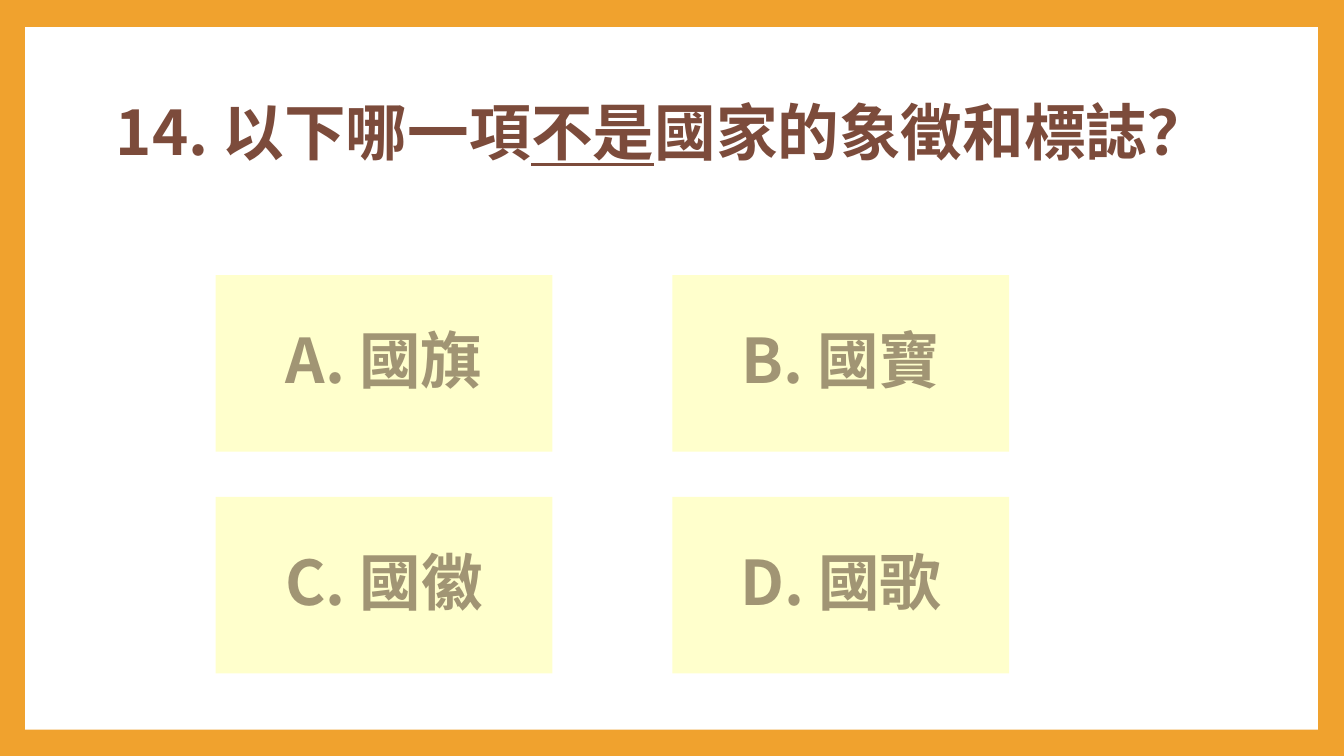
"""Build a quiz slide with one question and a grid of four answers."""
from dataclasses import dataclass

from lxml.etree import SubElement
from pptx import Presentation
from pptx.dml.color import RGBColor
from pptx.enum.shapes import MSO_SHAPE
from pptx.enum.text import MSO_ANCHOR, PP_ALIGN
from pptx.oxml.ns import qn
from pptx.shapes.autoshape import Shape
from pptx.slide import Slide
from pptx.text.text import Font, _Paragraph
from pptx.util import Inches, Pt

ORANGE = RGBColor(0xF0, 0xA2, 0x2E)
WHITE = RGBColor(0xFF, 0xFF, 0xFF)
BROWN = RGBColor(0x7C, 0x4B, 0x3B)
CREAM = RGBColor(0xFF, 0xFF, 0xCC)
KHAKI = RGBColor(0xA1, 0x95, 0x74)
FONT_NAME = "Noto Sans CJK SC"
GRID_LEFT, GRID_TOP = 2.14, 2.73
COLUMN_STEP, ROW_STEP = 4.53, 2.2
ANSWER_WIDTH, ANSWER_HEIGHT = 3.34, 1.75


@dataclass(frozen=True)
class Answer:
    text: str
    column: int
    row: int


ANSWERS = [
    Answer("A. 國旗", 0, 0),
    Answer("B. 國寶", 1, 0),
    Answer("C. 國徽", 0, 1),
    Answer("D. 國歌", 1, 1),
]


def format_font(font: Font, color: RGBColor) -> None:
    font.name = FONT_NAME
    font.size = Pt(44)
    font.bold = True
    font.color.rgb = color
    SubElement(font._element, qn("a:ea"), typeface=FONT_NAME)


def format_paragraph(paragraph: _Paragraph, color: RGBColor, alignment: PP_ALIGN) -> None:
    paragraph.alignment = alignment
    paragraph.line_spacing = 0.9
    format_font(paragraph.font, color)
    for run in paragraph.runs:
        format_font(run.font, color)


def add_rectangle(slide: Slide, left: float, top: float, width: float,
                  height: float, color: RGBColor) -> Shape:
    rectangle = slide.shapes.add_shape(
        MSO_SHAPE.RECTANGLE, Inches(left), Inches(top), Inches(width), Inches(height))
    rectangle.shadow.inherit = False
    rectangle.fill.solid()
    rectangle.fill.fore_color.rgb = color
    rectangle.line.fill.background()
    return rectangle


def write_question(slide: Slide) -> None:
    title = slide.shapes.title
    title.left, title.top = Inches(1.05), Inches(0.52)
    title.width, title.height = Inches(11.24), Inches(1.65)
    title.text_frame.vertical_anchor = MSO_ANCHOR.MIDDLE
    paragraph = title.text_frame.paragraphs[0]
    for text, underlined in [("14. 以下哪一項", False), ("不是", True),
                             ("國家的象徵和標誌？", False)]:
        run = paragraph.add_run()
        run.text = text
        run.font.underline = underlined
    format_paragraph(paragraph, BROWN, PP_ALIGN.LEFT)


def add_answer(slide: Slide, answer: Answer) -> None:
    box = add_rectangle(slide, GRID_LEFT + answer.column * COLUMN_STEP,
                        GRID_TOP + answer.row * ROW_STEP,
                        ANSWER_WIDTH, ANSWER_HEIGHT, CREAM)
    box.text_frame.vertical_anchor = MSO_ANCHOR.MIDDLE
    paragraph = box.text_frame.paragraphs[0]
    paragraph.text = answer.text
    paragraph.space_before = Pt(14)
    format_paragraph(paragraph, KHAKI, PP_ALIGN.CENTER)


def main() -> None:
    presentation = Presentation()
    presentation.slide_width, presentation.slide_height = Inches(13.33), Inches(7.5)
    slide = presentation.slides.add_slide(presentation.slide_layouts[5])
    slide.background.fill.solid()
    slide.background.fill.fore_color.rgb = ORANGE
    panel = add_rectangle(slide, 0.25, 0.27, 12.82, 6.97, WHITE)
    slide.shapes.title._element.addprevious(panel._element)
    write_question(slide)
    for answer in ANSWERS:
        add_answer(slide, answer)
    presentation.save("out.pptx")


if __name__ == "__main__":
    main()
